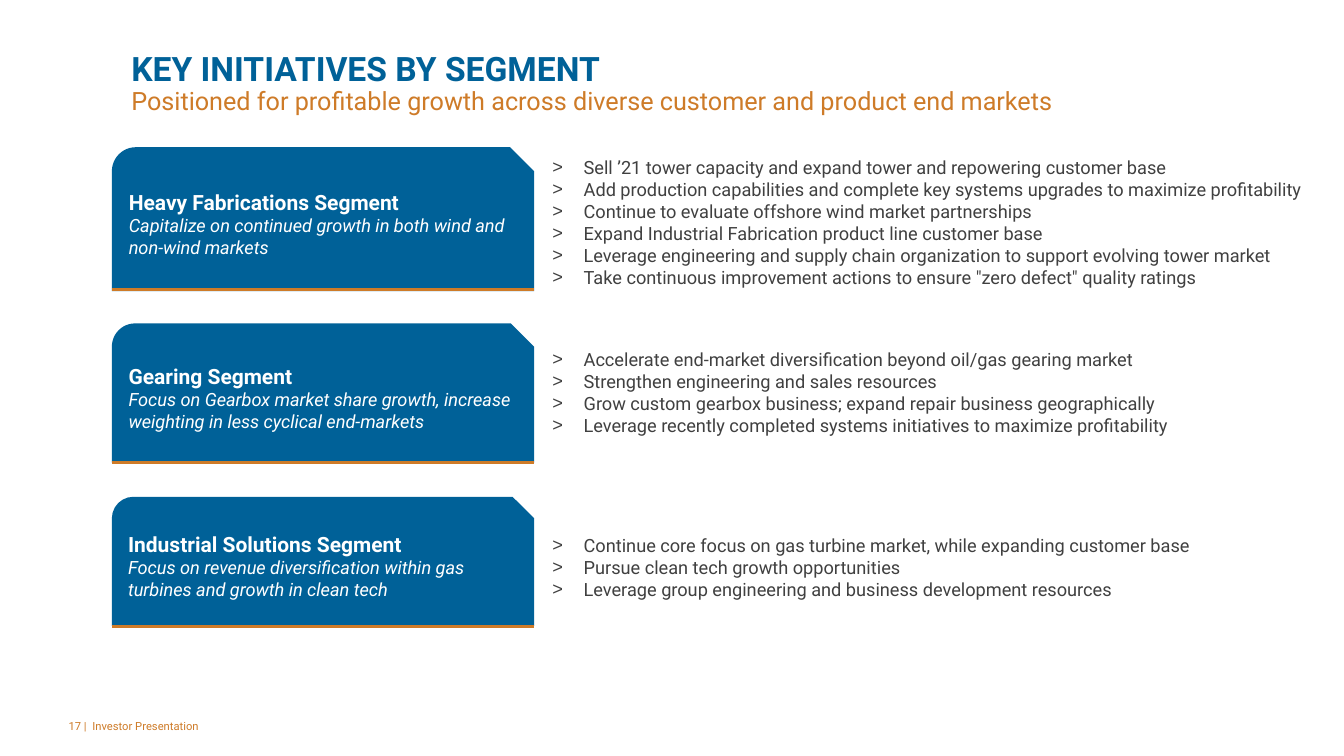
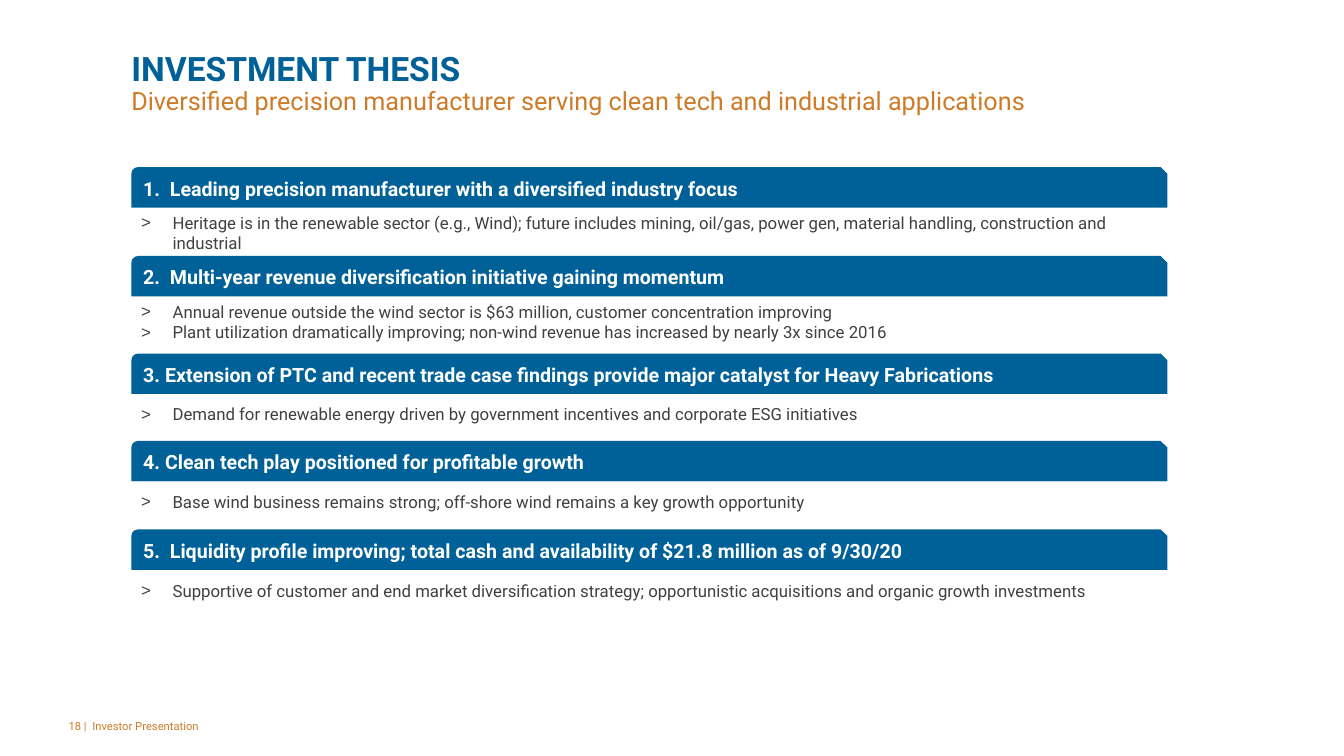
from lxml import etree
from pptx import Presentation
from pptx import util as u
from pptx.dml.color import RGBColor
from pptx.enum import shapes, text
from pptx.oxml.ns import qn

BLUE, ORANGE, GREY, WHITE = "006198", "CE7B28", "404040", "FFFFFF"
FONT = "Roboto"
FOOTER = "Investor Presentation"
LEFT = 3.31  # title and band edge, cm
HANG = 0.79  # bullet indent, cm

# Content: positions in cm
INITIATIVES = {
    "number": 17,
    "title": "KEY INITIATIVES BY SEGMENT",
    "subtitle": "Positioned for profitable growth across diverse customer and product end markets",
}
# (card top, card height, rule y, list top, list inset, name, aim, actions)
SEGMENTS = [
    (3.71, 3.63, 7.3, 3.73, 0.13, "Heavy Fabrications Segment",
     "Capitalize on continued growth in both wind and non-wind markets",
     ["Sell ’21 tower capacity and expand tower and repowering customer base",
      "Add production capabilities and complete key systems upgrades to maximize profitability",
      "Continue to evaluate offshore wind market partnerships",
      "Expand Industrial Fabrication product line customer base",
      "Leverage engineering and supply chain organization to support evolving tower market",
      "Take continuous improvement actions to ensure \"zero defect\" quality ratings"]),
    (8.15, 3.51, 11.65, 8.01, 0.13, "Gearing Segment",
     "Focus on Gearbox market share growth, increase weighting in less cyclical end-markets",
     ["Accelerate end-market diversification beyond oil/gas gearing market",
      "Strengthen engineering and sales resources",
      "Grow custom gearbox business; expand repair business geographically",
      "Leverage recently completed systems initiatives to maximize profitability"]),
    (12.52, 3.25, 15.78, 11.89, 1.21, "Industrial Solutions Segment",
     "Focus on revenue diversification within gas turbines and growth in clean tech",
     ["Continue core focus on gas turbine market, while expanding customer base",
      "Pursue clean tech growth opportunities",
      "Leverage group engineering and business development resources"]),
]

THESIS = {
    "number": 18,
    "title": "INVESTMENT THESIS",
    "subtitle": "Diversified precision manufacturer serving clean tech and industrial applications",
}
# (band top, list top, heading, points)
REASONS = [
    (4.21, 5.36, "1.  Leading precision manufacturer with a diversified industry focus",
     ["Heritage is in the renewable sector (e.g., Wind); future includes mining, oil/gas, "
      "power gen, material handling, construction and industrial"]),
    (6.45, 7.61, "2.  Multi-year revenue diversification initiative gaining momentum",
     ["Annual revenue outside the wind sector is $63 million, customer concentration improving",
      "Plant utilization dramatically improving; non-wind revenue has increased by nearly 3x since 2016"]),
    (8.91, 9.93, "3. Extension of PTC and recent trade case findings provide major catalyst for Heavy Fabrications",
     ["Demand for renewable energy driven by government incentives and corporate ESG initiatives"]),
    (11.11, 12.14, "4. Clean tech play positioned for profitable growth",
     ["Base wind business remains strong; off-shore wind remains a key growth opportunity"]),
    (13.34, 14.38, "5.  Liquidity profile improving; total cash and availability of $21.8 million as of 9/30/20",
     ["Supportive of customer and end market diversification strategy; "
      "opportunistic acquisitions and organic growth investments"]),
]


def color(value):
    return RGBColor.from_string(value)


def box(left, top, width, height):
    return [u.Cm(value) for value in (left, top, width, height)]


def add_run(paragraph, words, size, hex_color, bold=False, italic=False):
    run = paragraph.add_run()
    run.text = words
    font = run.font
    font.name, font.size, font.bold, font.italic = FONT, u.Pt(size), bold, italic
    font.color.rgb = color(hex_color)


def set_frame(shape, anchor=text.MSO_ANCHOR.MIDDLE):
    frame = shape.text_frame
    frame.word_wrap = True
    frame.auto_size = text.MSO_AUTO_SIZE.NONE
    frame.vertical_anchor = anchor
    return frame


def next_paragraph(frame, index):
    paragraph = frame.add_paragraph() if index else frame.paragraphs[0]
    paragraph.alignment = text.PP_ALIGN.LEFT
    return paragraph


def add_panel(slide, preset, place, fill):
    """Plain filled shape without line or shadow; returns its text frame."""
    panel = slide.shapes.add_shape(preset, *box(*place))
    panel.shadow.inherit = False
    panel.fill.solid()
    panel.fill.fore_color.rgb = color(fill)
    panel.line.fill.background()
    return set_frame(panel)


def add_list(slide, place, items, size, indent=HANG):
    frame = add_panel(slide, shapes.MSO_SHAPE.RECTANGLE, place, WHITE)
    for index, item in enumerate(items):
        paragraph = next_paragraph(frame, index)
        properties = paragraph._p.get_or_add_pPr()
        properties.set("marL", str(u.Cm(indent)))
        properties.set("indent", str(-u.Cm(HANG)))
        etree.SubElement(properties, qn("a:buFont")).set("typeface", "Arial")
        etree.SubElement(properties, qn("a:buChar")).set("char", ">")
        add_run(paragraph, item, size, GREY)
    return frame


def add_card(slide, place, lines):
    """Blue snipped card; lines are (words, size, bold, italic)."""
    frame = add_panel(slide, shapes.MSO_SHAPE.SNIP_ROUND_RECTANGLE, place, BLUE)
    for index, (words, size, bold, italic) in enumerate(lines):
        add_run(next_paragraph(frame, index), words, size, WHITE, bold, italic)
    return frame


def add_rule(slide, left, right, y):
    rule = slide.shapes.add_connector(
        shapes.MSO_CONNECTOR.STRAIGHT, u.Cm(left), u.Cm(y), u.Cm(right), u.Cm(y))
    rule.line.color.rgb = color(ORANGE)
    rule.line.width = u.Pt(2.25)
    etree.SubElement(rule._element.spPr, qn("a:effectLst"))


def add_slide(presentation, heading):
    """Blank slide with the shared title and footer."""
    slide = presentation.slides.add_slide(presentation.slide_layouts[6])
    frame = set_frame(slide.shapes.add_textbox(*box(LEFT, 1.32, 27.46, 1.6)),
                      text.MSO_ANCHOR.BOTTOM)
    frame.margin_left = frame.margin_right = frame.margin_top = frame.margin_bottom = 0
    paragraph = next_paragraph(frame, 0)
    paragraph.line_spacing = 0.9
    add_run(paragraph, heading["title"], 24, BLUE, bold=True)
    paragraph.add_line_break()
    add_run(paragraph, heading["subtitle"], 18, ORANGE)
    footer = set_frame(slide.shapes.add_textbox(*box(1.48, 17.78, 7.62, 1.02)))
    add_run(next_paragraph(footer, 0), f"{heading['number']} |  {FOOTER}", 8, ORANGE)
    return slide


def build_initiatives(presentation):
    slide = add_slide(presentation, INITIATIVES)
    left, width = 2.82, 10.64
    list_left, list_width, list_height, list_indent = 12.4, 20.8, 3.73, 2.06
    for top, height, rule_y, list_top, inset, name, aim, actions in SEGMENTS:
        actions_frame = add_list(slide, (list_left, list_top, list_width, list_height),
                                 actions, 13, list_indent)
        actions_frame.margin_top = u.Cm(inset)
        card_frame = add_card(slide, (left, top, width, height),
                              [(name, 15, True, False), (aim, 13, False, True)])
        card_frame.margin_top = u.Cm(0.19)
        add_rule(slide, left, left + width, rule_y)


def build_thesis(presentation):
    slide = add_slide(presentation, THESIS)
    width, height = 26.11, 1.02
    for band_top, list_top, heading, points in REASONS:
        add_card(slide, (LEFT, band_top, width, height), [(heading, 14, True, False)])
        add_list(slide, (LEFT, list_top, width, height), points, 12)


def main():
    presentation = Presentation()
    presentation.slide_width, presentation.slide_height = u.Cm(33.87), u.Cm(19.05)
    build_initiatives(presentation)
    build_thesis(presentation)
    presentation.save("out.pptx")


if __name__ == "__main__":
    main()
